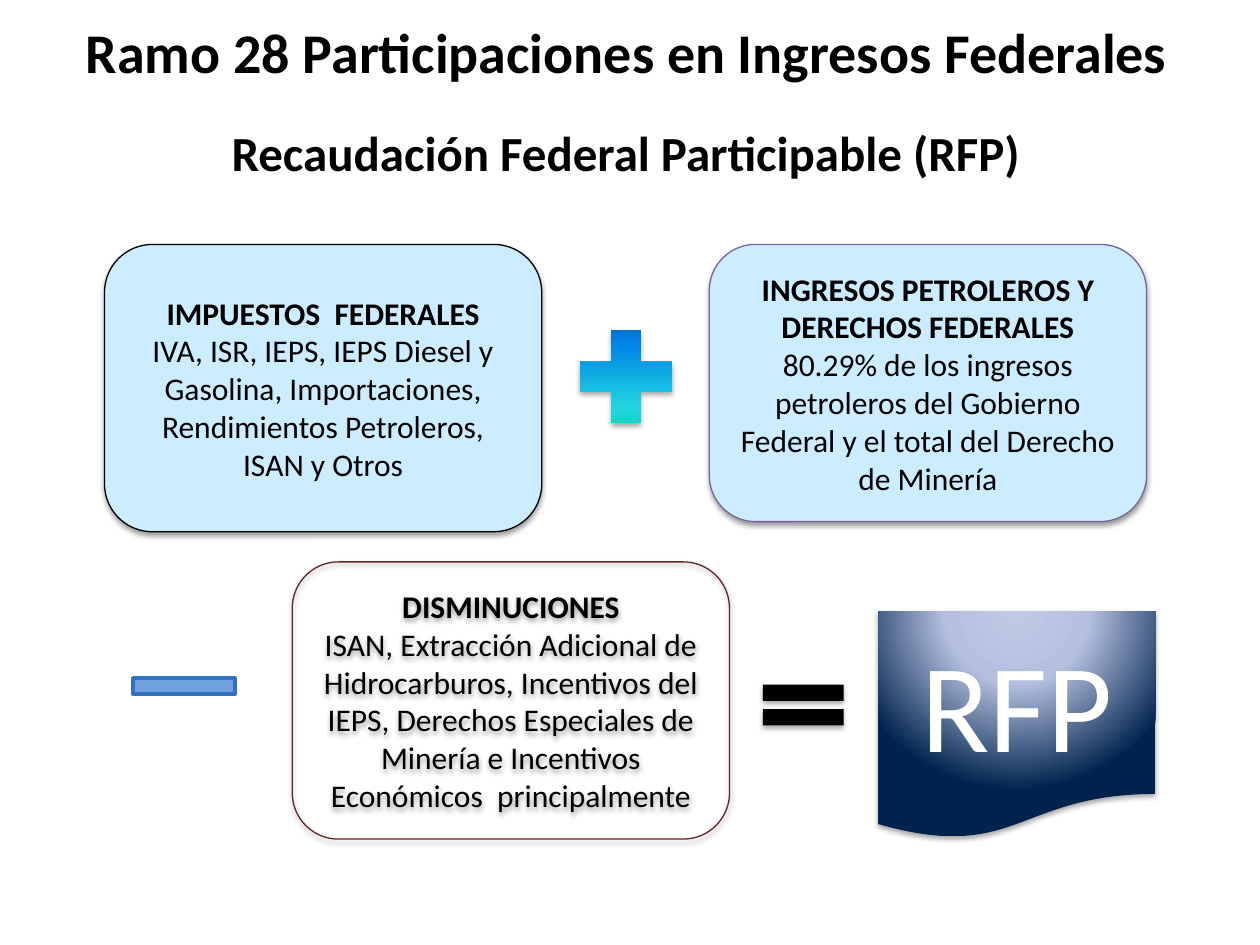
from lxml import etree
from pptx import Presentation
from pptx.dml.color import RGBColor
from pptx.enum import shapes, text
from pptx.oxml import ns
from pptx.util import Inches, Pt

FONT = "Calibri"
BLACK = RGBColor(0x00, 0x00, 0x00)
WHITE = RGBColor(0xFF, 0xFF, 0xFF)
PALE_BLUE = RGBColor(0xCC, 0xEC, 0xFF)
PURPLE = RGBColor(0x7D, 0x60, 0xA0)
DARK_RED = RGBColor(0x63, 0x25, 0x23)
MINUS_FILL = RGBColor(0x71, 0xA1, 0xDC)
MINUS_LINE = RGBColor(0x31, 0x72, 0xC4)
PLUS_STOPS = [
    (0, RGBColor(0x03, 0xD4, 0xA8)),
    (25, RGBColor(0x21, 0xD6, 0xE0)),
    (75, RGBColor(0x00, 0x87, 0xE6)),
    (100, RGBColor(0x00, 0x5C, 0xBF)),
]
RESULT_STOPS = [
    (0, RGBColor(0xBF, 0xC9, 0xE5)),
    (40, RGBColor(0xB5, 0xC0, 0xE0)),
    (100, RGBColor(0x00, 0x23, 0x4D)),
]
BOX_SIZE = (3.47, 2.2)


def add_child(parent, tag, **attributes):
    values = {name: str(value) for name, value in attributes.items()}
    return etree.SubElement(parent, ns.qn(tag), values)


def add_shadow(shape, opacity, distance):
    shape.shadow.inherit = False
    effects = shape._element.spPr.find(ns.qn("a:effectLst"))
    shadow = add_child(effects, "a:outerShdw", blurRad=Pt(3.1), dist=Pt(distance),
                       dir=90 * 60000, rotWithShape=0)
    color = add_child(shadow, "a:srgbClr", val=BLACK)
    add_child(color, "a:alpha", val=opacity * 1000)


def set_gradient(shape, stops, angle=None):
    """Fill linearly at the angle, or in circles from above the shape without one."""
    shape.fill.background()
    properties = shape._element.spPr
    gradient = etree.Element(ns.qn("a:gradFill"), rotWithShape="1")
    stop_list = add_child(gradient, "a:gsLst")
    for position, color in stops:
        stop = add_child(stop_list, "a:gs", pos=position * 1000)
        add_child(stop, "a:srgbClr", val=color)
    if angle is None:
        circle = add_child(gradient, "a:path", path="circle")
        add_child(circle, "a:fillToRect", l=50000, t=-80000, r=50000, b=180000)
    else:
        add_child(gradient, "a:lin", ang=angle * 60000, scaled=0)
    properties.replace(properties.find(ns.qn("a:noFill")), gradient)


def write_line(paragraph, words, size, color=BLACK, bold=False):
    paragraph.alignment = text.PP_ALIGN.CENTER
    run = paragraph.add_run()
    run.text = words
    run.font.name = FONT
    run.font.size = Pt(size)
    run.font.bold = bold
    run.font.color.rgb = color


def write_heading(shape, words, size):
    frame = shape.text_frame
    frame.word_wrap = True
    frame.auto_size = text.MSO_AUTO_SIZE.NONE
    frame.vertical_anchor = text.MSO_ANCHOR.TOP
    write_line(frame.paragraphs[0], words, size, bold=True)


def add_title(slide, words, left, top, width, height):
    title = slide.shapes.title
    title.left, title.top = Inches(left), Inches(top)
    title.width, title.height = Inches(width), Inches(height)
    write_heading(title, words, 28)


def add_heading(slide, words, left, top, width, height):
    box = slide.shapes.add_textbox(Inches(left), Inches(top), Inches(width), Inches(height))
    write_heading(box, words, 32)


def add_preset(slide, preset, left, top, width, height, fill=None, line=None, line_width=0.75):
    shape = slide.shapes.add_shape(
        preset, Inches(left), Inches(top), Inches(width), Inches(height))
    shape.shadow.inherit = False
    if fill is None:
        shape.fill.background()
    else:
        shape.fill.solid()
        shape.fill.fore_color.rgb = fill
    if line is None:
        shape.line.fill.background()
    else:
        shape.line.color.rgb = line
        shape.line.width = Pt(line_width)
    return shape


def add_concept(slide, heading, detail, left, top, line, fill=None, height=BOX_SIZE[1]):
    box = add_preset(slide, shapes.MSO_SHAPE.ROUNDED_RECTANGLE, left, top,
                     BOX_SIZE[0], height, fill, line)
    add_shadow(box, 38, 1.6)
    frame = box.text_frame
    frame.word_wrap = True
    frame.vertical_anchor = text.MSO_ANCHOR.MIDDLE
    write_line(frame.paragraphs[0], heading, 18, bold=True)
    write_line(frame.add_paragraph(), detail, 18)


def add_operators(slide):
    equal = add_preset(slide, shapes.MSO_SHAPE.MATH_EQUAL, 5.94, 5.32, 0.87, 0.55, BLACK)
    add_shadow(equal, 35, 1.8)
    plus = add_preset(slide, shapes.MSO_SHAPE.MATH_PLUS, 4.47, 2.49, 1, 1)
    set_gradient(plus, PLUS_STOPS, angle=270)
    add_shadow(plus, 35, 1.8)
    add_preset(slide, shapes.MSO_SHAPE.MATH_MINUS, 0.91, 5.17, 1.1, 0.55,
               MINUS_FILL, MINUS_LINE, 2)


def add_result(slide):
    result = add_preset(slide, shapes.MSO_SHAPE.FLOWCHART_DOCUMENT, 6.97, 4.85, 2.2, 1.81)
    set_gradient(result, RESULT_STOPS)
    add_shadow(result, 35, 1.8)
    result.text_frame.word_wrap = True
    result.text_frame.vertical_anchor = text.MSO_ANCHOR.MIDDLE
    write_line(result.text_frame.paragraphs[0], "RFP", 72, WHITE)


def main():
    presentation = Presentation()
    presentation.slide_width, presentation.slide_height = Inches(10), Inches(7.5)
    slide = presentation.slides.add_slide(presentation.slide_layouts[5])

    add_title(slide, "Recaudación Federal Participable (RFP)", 0.2, 0.92, 9.53, 0.47)
    add_concept(slide, "INGRESOS PETROLEROS Y DERECHOS FEDERALES",
                "80.29% de los ingresos petroleros del Gobierno Federal "
                "y el total del Derecho de Minería",
                5.63, 1.94, PURPLE, PALE_BLUE)
    add_concept(slide, "IMPUESTOS  FEDERALES",
                "IVA, ISR, IEPS, IEPS Diesel y Gasolina, Importaciones, "
                "Rendimientos Petroleros, ISAN y Otros",
                0.83, 1.94, BLACK, PALE_BLUE, height=2.28)
    add_operators(slide)
    add_result(slide)
    add_concept(slide, "DISMINUCIONES",
                "ISAN, Extracción Adicional de Hidrocarburos, Incentivos del IEPS, "
                "Derechos Especiales de Minería e Incentivos Económicos  principalmente",
                2.32, 4.46, DARK_RED)
    add_heading(slide, "Ramo 28 Participaciones en Ingresos Federales", 0.37, 0.09, 9.21, 0.55)

    presentation.save("out.pptx")


if __name__ == "__main__":
    main()
